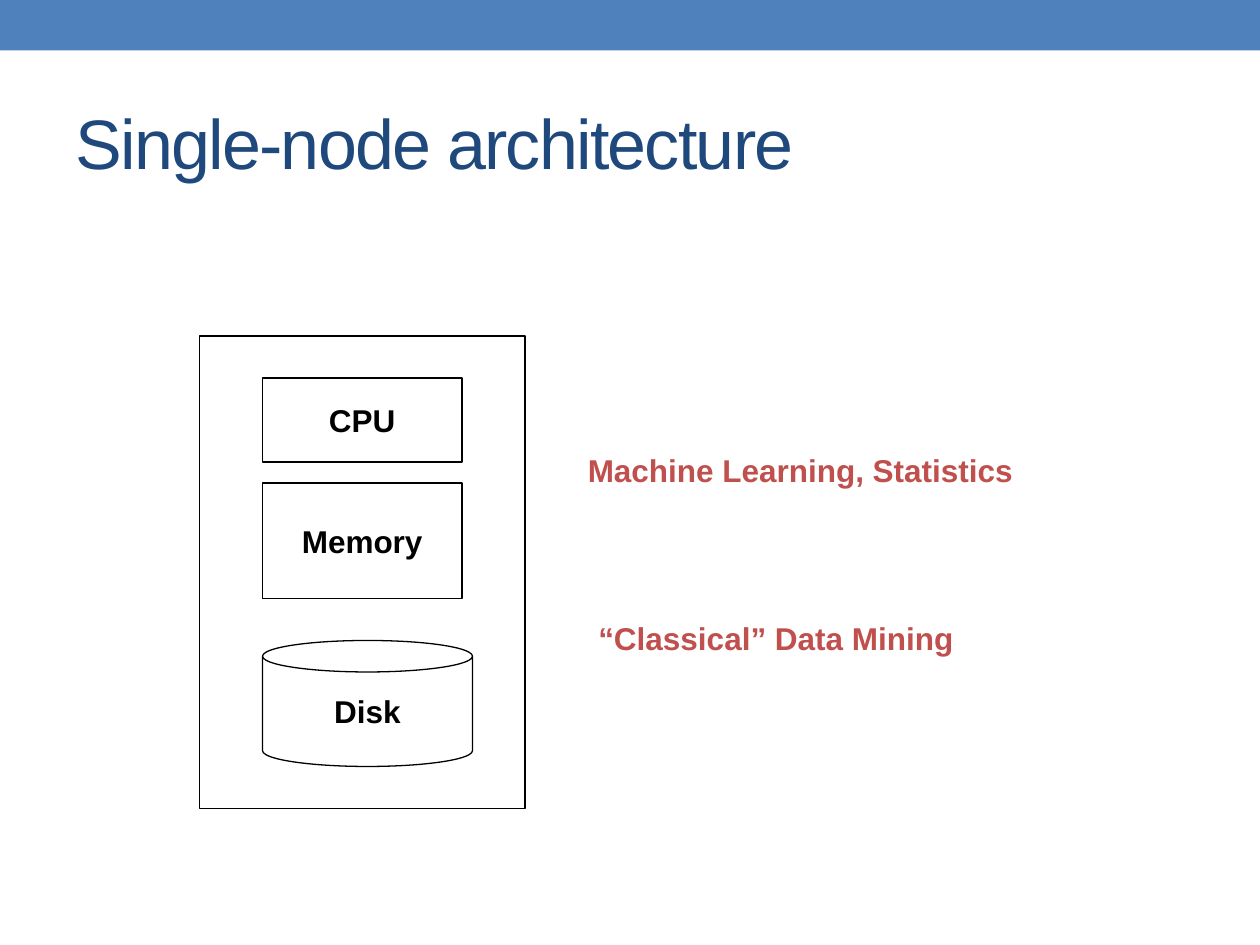
from pptx import Presentation
from pptx.dml.color import RGBColor
from pptx.enum.shapes import MSO_SHAPE
from pptx.enum.text import MSO_ANCHOR, PP_ALIGN
from pptx.util import Inches, Pt

RECT, CAN = MSO_SHAPE.RECTANGLE, MSO_SHAPE.CAN
MIDDLE = MSO_ANCHOR.MIDDLE
CENTER, LEFT = PP_ALIGN.CENTER, PP_ALIGN.LEFT
BLUE, NAVY, RED, BLACK = "4F81BD", "1F497D", "C0504D", "000000"

deck = Presentation()
deck.slide_width, deck.slide_height = Inches(10), Inches(7.5)
slide = deck.slides.add_slide(deck.slide_layouts[6])
CELL = deck.slide_width / 120


def cells(*counts):
    return [round(count * CELL) for count in counts]


def write(holder, text, size, color, bold, align, wrap):
    frame = holder.text_frame
    frame.word_wrap = wrap
    frame.vertical_anchor = MIDDLE
    paragraph = frame.paragraphs[0]
    paragraph.text = text
    paragraph.alignment = align
    paragraph.font.name = "Arial"
    paragraph.font.size = Pt(size)
    paragraph.font.bold = bold
    paragraph.font.color.rgb = RGBColor.from_string(color)
    return paragraph


banner = slide.shapes.add_shape(RECT, *cells(0, 0, 120, 4.8))
banner.shadow.inherit = False
banner.fill.solid()
banner.fill.fore_color.rgb = RGBColor.from_string(BLUE)
banner.line.fill.background()

title = slide.shapes.add_textbox(*cells(6, 7, 108, 13))
heading = write(title, "Single-node architecture", 40, NAVY, False, LEFT, True)
heading.runs[0].font._element.set("spc", "-100")

node_parts = [
    ("Memory", RECT, 25, 46, 19, 11),
    ("Disk", CAN, 25, 61, 20, 12),
    ("CPU", RECT, 25, 36, 19, 8),
    ("", RECT, 19, 32, 31, 45),
]
for label, outline, left, top, width, height in node_parts:
    part = slide.shapes.add_shape(outline, *cells(left, top, width, height))
    part.shadow.inherit = False
    part.fill.background()
    part.line.color.rgb = RGBColor.from_string(BLACK)
    part.line.width = Pt(0.75)
    if label:
        write(part, label, 18, BLACK, True, CENTER, False)

workloads = [
    ("Machine Learning, Statistics", 54.8, 42.4, 49.8),
    ("“Classical” Data Mining", 55.8, 58.4, 41.8),
]
for workload, left, top, width in workloads:
    caption = slide.shapes.add_textbox(*cells(left, top, width, 4.8))
    write(caption, workload, 18, RED, True, LEFT, True)

deck.save("out.pptx")
